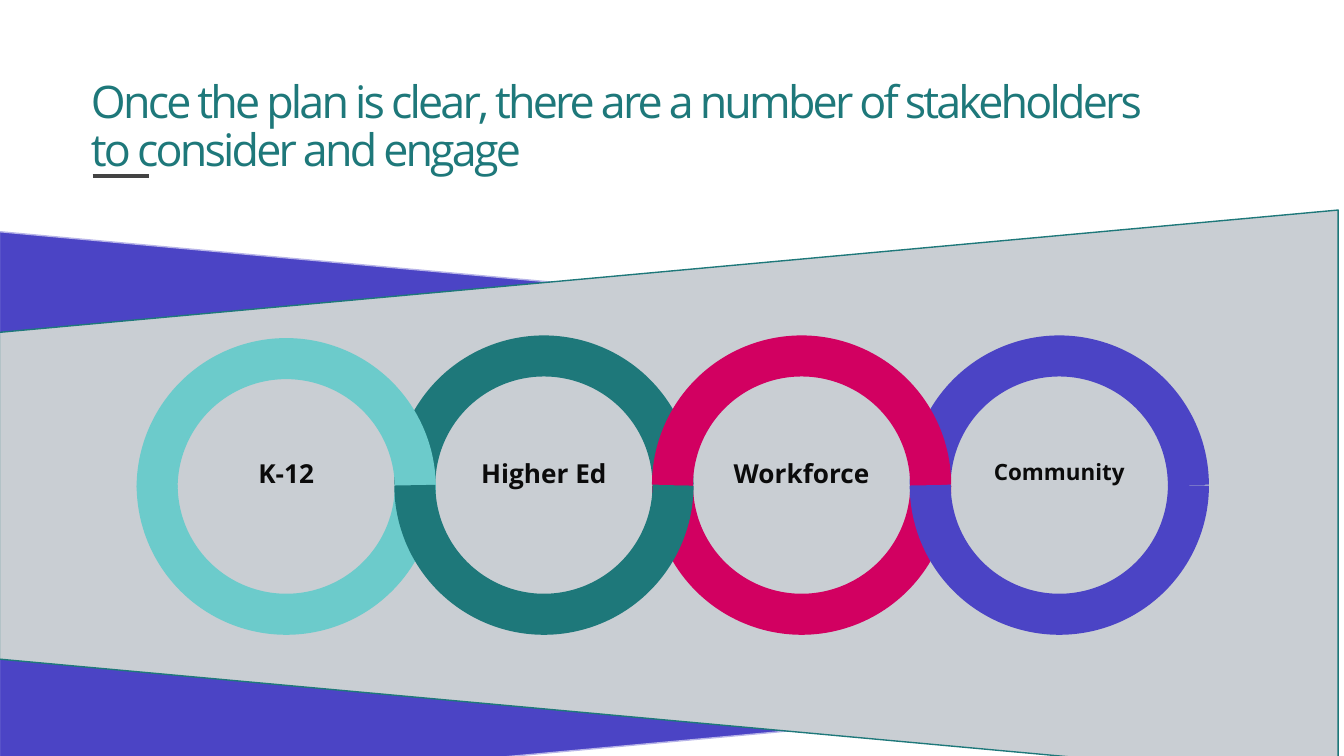
"""Build the stakeholder slide with four linked rings."""
from lxml import etree
from pptx import Presentation
from pptx.dml.color import RGBColor
from pptx.enum import shapes, text
from pptx.oxml import ns
from pptx.util import Cm, Pt

THEME = {
    "font": "Open Sans", "ink": "0B0B0B", "teal": "1E787A", "aqua": "6CCBCB",
    "pink": "D20061", "violet": "4B44C5", "lilac": "B7B4E8",
    "grey": "C9CED3", "rule": "434343", "title": 24, "label": 14, "small": 12,
}
TITLE = "Once the plan is clear, there are a number of stakeholders to consider and engage"
# name, colour, type size, label width, label height
RINGS = [
    ("K-12", "aqua", "label", 3.05, 1.37),
    ("Higher Ed", "teal", "label", 3.05, 0.86),
    ("Workforce", "pink", "label", 3.3, 1.45),
    ("Community", "violet", "small", 3.05, 0.76),
]
# fill, line, turn, middle height
BANDS = [("violet", "lilac", 90, 9.78), ("grey", "teal", 270, 9.37)]
# ring, turn, drop: from back to front
HALVES = [(3, 0, 0), (2, 180, 0), (1, 0, 0), (0, 0, 0.05),
          (0, 180, 0), (1, 180, 0), (2, 0, 0), (3, 180, 0)]
LEFT, TOP, SIZE, STEP = 2.97, 6.73, 4.88, 4.87


def tint(name):
    return RGBColor.from_string(THEME[name])


def place(box):
    return [Cm(n) for n in box]


def draw(page, kind, box, fill, line, width, turn):
    shape = page.shapes.add_shape(kind, *place(box))
    shape.shadow.inherit = False
    shape.rotation = turn
    if fill:
        shape.fill.solid()
        shape.fill.fore_color.rgb = tint(fill)
    else:
        shape.fill.background()
    shape.line.color.rgb = tint(line)
    shape.line.width = Pt(width)
    return shape


def write(page, words, box, size, ink, **form):
    frame = page.shapes.add_textbox(*place(box)).text_frame
    frame.word_wrap = True
    para = frame.paragraphs[0]
    run = para.add_run()
    run.text = words
    face = {"name": THEME["font"], "size": Pt(THEME[size]), "bold": form.pop("bold", False)}
    for key, value in face.items():
        setattr(run.font, key, value)
    run.font.color.rgb = tint(ink)
    for key, value in form.items():
        setattr(frame if key == "vertical_anchor" else para, key, value)
    return run


def main():
    deck = Presentation()
    deck.slide_width, deck.slide_height = Cm(25.4), Cm(14.29)
    page = deck.slides.add_slide(deck.slide_layouts[6])

    rule = page.shapes.add_connector(
        shapes.MSO_CONNECTOR.STRAIGHT, *place((1.75, 3.33, 2.82, 3.33)))
    rule.line.color.rgb = tint("rule")
    rule.line.width = Pt(2)
    etree.SubElement(rule._element.spPr, ns.qn("a:effectLst"))

    kind = shapes.MSO_SHAPE
    for index, (fill, line, turn, mid) in enumerate(BANDS):
        band = draw(page, kind.TRAPEZOID, (7.24, mid - 12.65, 10.8, 25.3),
                    fill, line, 0.75, turn)
        band.adjustments[0] = 0.214
        if index == 0:
            run = write(page, TITLE, (1.47, 1.22, 21.16, 2.39), "title", "teal",
                        line_spacing=0.9, vertical_anchor=text.MSO_ANCHOR.MIDDLE)
            run.font._element.set("spc", "-150")

    for ring, turn, drop in HALVES:
        half = draw(page, kind.ARC, (LEFT + ring * STEP, TOP + drop, SIZE, SIZE),
                    None, RINGS[ring][1], 22, turn)
        half.adjustments[0] = 108.016
        half.adjustments[1] = 0

    for ring, (name, _, size, wide, high) in enumerate(RINGS):
        left = LEFT + ring * STEP + (SIZE - wide) / 2
        write(page, name, (left, 8.53, wide, high), size, "ink",
              bold=True, alignment=text.PP_ALIGN.CENTER)
    deck.save("out.pptx")


if __name__ == "__main__":
    main()
